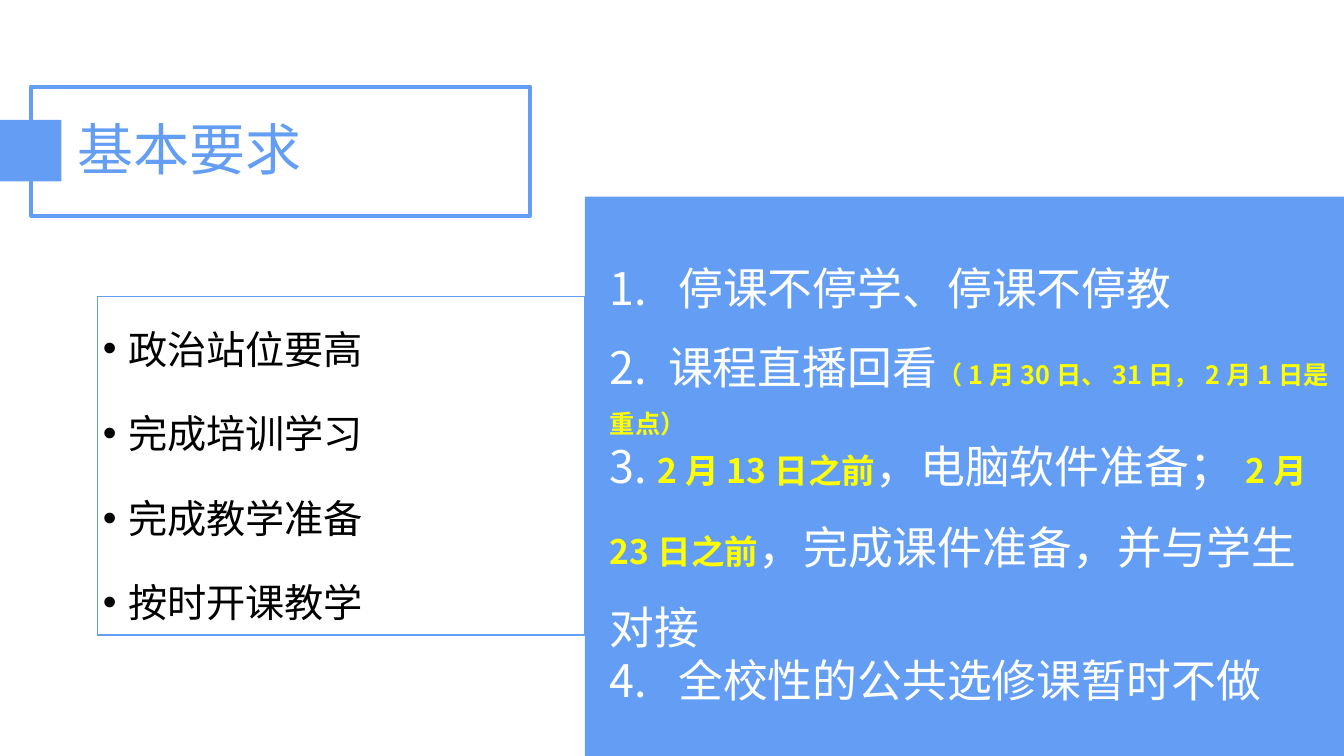
import pptx
import pptx.util
import pptx.dml.color
import pptx.enum.shapes
import pptx.enum.text
import pptx.oxml.ns
from lxml import etree

Inches, Pt = pptx.util.Inches, pptx.util.Pt
ANCHOR = pptx.enum.text.MSO_ANCHOR
FONT = "Noto Sans CJK SC"
COLORS = {"blue": "639EF4", "white": "FFFFFF", "yellow": "FFFF00", "black": "000000"}

TITLE = "基本要求"
GOALS = ["政治站位要高", "完成培训学习", "完成教学准备", "按时开课教学"]
STYLES = {
    "title": (40, "blue", False),
    "goal": (28, "black", False),
    "item": (32, "white", False),
    "date": (24, "yellow", True),
    "note": (18, "yellow", True),
}
ITEMS = [
    (2.08, 5.68, 1.28, [("1.  停课不停学、停课不停教", "item")]),
    (3.09, 7.33, 1.28, [("2. 课程直播回看", "item"),
                        ("（1月30日、31日，2月1日是重点）", "note")]),
    (4.27, 7.33, 2.03, [("3. ", "item"), ("2月13日之前", "date"),
                        ("，电脑软件准备；", "item"), ("2月23日之前", "date"),
                        ("，完成课件准备，并与学生对接", "item")]),
    (5.97, 7.33, 1.28, [("4.  全校性的公共选修课暂时不做", "item")]),
]
ITEM_LEFT = 6
TITLE_FRAME = (0.31, 0.86, 4.95, 1.28)
TITLE_BOX = (0.72, 1.07, 4.3, 0.88)
TITLE_MARK = (0, 1.19, 0.61, 0.61)
GOALS_BOX = (0.97, 2.94, 4.83, 3.36)
PANEL = (5.8, 1.95, 7.53, 5.55)


def rgb(name):
    return pptx.dml.color.RGBColor.from_string(COLORS[name])


def add_rect(s, box, fill=None, line=None, width=1):
    sp = s.shapes.add_shape(pptx.enum.shapes.MSO_SHAPE.RECTANGLE, *map(Inches, box))
    sp.shadow.inherit = False
    if fill:
        sp.fill.solid()
        sp.fill.fore_color.rgb = rgb(fill)
    else:
        sp.fill.background()
    if line:
        sp.line.color.rgb = rgb(line)
        sp.line.width = Pt(width)
    else:
        sp.line.fill.background()
    return sp


def add_run(p, text, style):
    size, color, bold = STYLES[style]
    r = p.add_run()
    r.text = text
    r.font.size = Pt(size)
    r.font.bold = bold
    r.font.color.rgb = rgb(color)
    r.font.name = FONT
    ea = etree.SubElement(r.font._element, pptx.oxml.ns.qn("a:ea"))
    ea.set("typeface", FONT)


def add_bullet(p):
    props = p._p.get_or_add_pPr()
    props.set("marL", str(Inches(0.25)))
    props.set("indent", str(-Inches(0.25)))
    font = etree.SubElement(props, pptx.oxml.ns.qn("a:buFont"))
    font.set("typeface", "Arial")
    etree.SubElement(props, pptx.oxml.ns.qn("a:buChar")).set("char", "•")


def write(sp, paragraphs, spacing, anchor=ANCHOR.MIDDLE, before=0, bullets=False):
    tf = sp.text_frame
    tf.word_wrap = True
    tf.vertical_anchor = anchor
    tf.margin_left = tf.margin_right = tf.margin_top = tf.margin_bottom = Inches(0.05)
    for i, runs in enumerate(paragraphs):
        p = tf.add_paragraph() if i else tf.paragraphs[0]
        p.alignment = pptx.enum.text.PP_ALIGN.LEFT
        p.line_spacing = spacing
        p.space_before = Pt(before)
        if bullets:
            add_bullet(p)
        for text, style in runs:
            add_run(p, text, style)


def add_text(s, box, runs, spacing):
    write(s.shapes.add_textbox(*map(Inches, box)), [runs], spacing)


def main():
    prs = pptx.Presentation()
    prs.slide_width, prs.slide_height = Inches(13.33), Inches(7.5)
    s = prs.slides.add_slide(prs.slide_layouts[6])

    goals = add_rect(s, GOALS_BOX, line="blue")
    write(goals, [[(goal, "goal")] for goal in GOALS], 1.5, ANCHOR.TOP, 10, True)

    add_rect(s, TITLE_FRAME, line="blue", width=3)
    add_text(s, TITLE_BOX, [(TITLE, "title")], 0.9)
    add_rect(s, TITLE_MARK, fill="blue")

    add_rect(s, PANEL, fill="blue")
    for top, width, height, runs in ITEMS:
        add_text(s, (ITEM_LEFT, top, width, height), runs, 1.5)

    prs.save("out.pptx")


if __name__ == "__main__":
    main()
